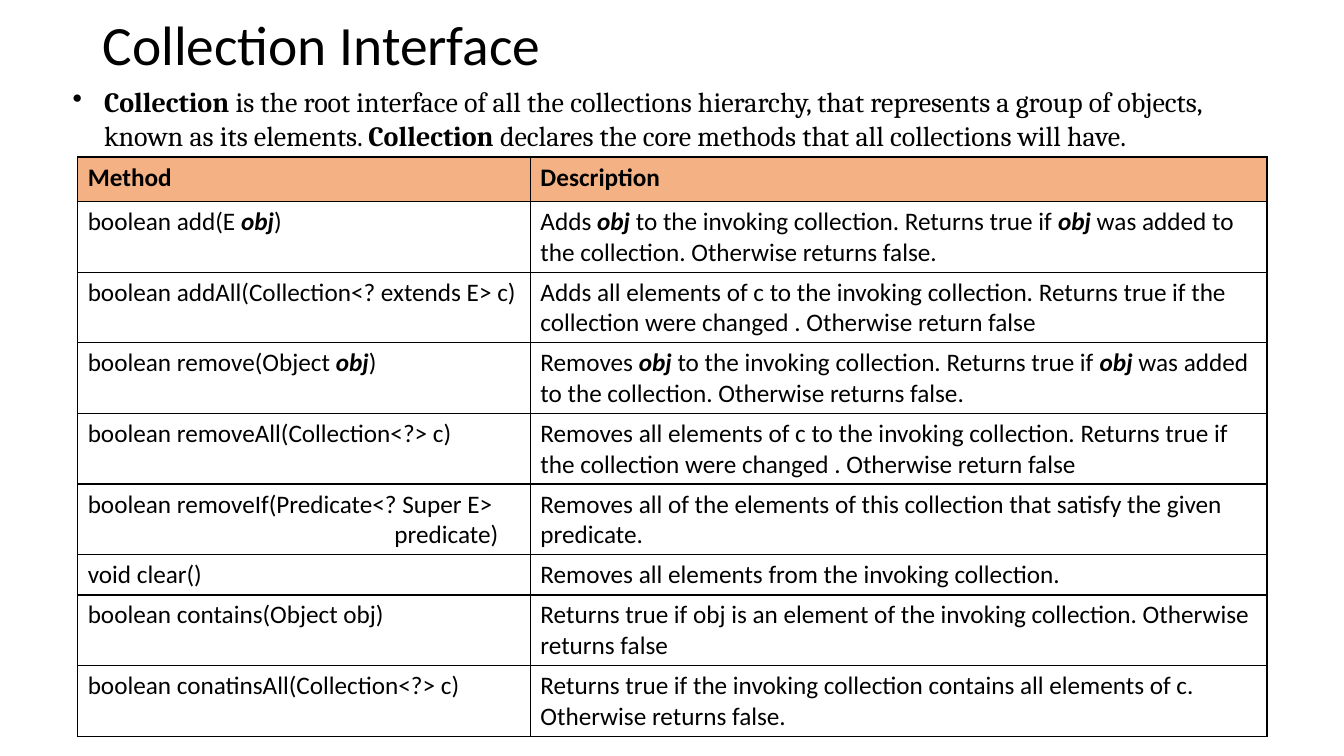
from lxml.etree import SubElement
from pptx import Presentation
from pptx.dml.color import RGBColor
from pptx.enum.text import MSO_ANCHOR
from pptx.oxml.ns import qn
from pptx.util import Inches, Pt

METHODS = [
    ("Method", "Description"),
    ("boolean add(E *obj*)",
     "Adds *obj* to the invoking collection. Returns true if *obj* was added to the collection. "
     "Otherwise returns false."),
    ("boolean addAll(Collection<? extends E> c)",
     "Adds all elements of c to the invoking collection. Returns true if the collection were changed . "
     "Otherwise return false"),
    ("boolean remove(Object *obj*)",
     "Removes *obj* to the invoking collection. Returns true if *obj* was added to the collection. "
     "Otherwise returns false."),
    ("boolean removeAll(Collection<?> c)",
     "Removes all elements of c to the invoking collection. Returns true if the collection were changed . "
     "Otherwise return false"),
    ("boolean removeIf(Predicate<? Super E>\npredicate)",
     "Removes all of the elements of this collection that satisfy the given predicate."),
    ("void clear()", "Removes all elements from the invoking collection."),
    ("boolean contains(Object obj)",
     "Returns true if obj is an element of the invoking collection. Otherwise returns false"),
    ("boolean conatinsAll(Collection<?> c)",
     "Returns true if the invoking collection contains all elements of c. Otherwise returns false."),
]
INTRO = ("*Collection *is the root interface of all the collections hierarchy, that represents a group of "
         "objects, known as its elements. *Collection *declares the core methods that all collections will have.")


def color(hex_code):
    """Turn a hex string into a colour."""
    return RGBColor.from_string(hex_code)


class MethodSlide:
    """Draw styled elements on a 32 by 18 grid."""

    INK, HEADER = "000000", "F4B183"
    BODY, INTRO = "Calibri", "Cambria"

    def __init__(self, deck):
        """Add a blank slide and measure its grid."""
        self.slide = deck.slides.add_slide(deck.slide_layouts[6])
        self.column = deck.slide_width / 32
        self.row = deck.slide_height / 18

    def across(self, columns):
        """Return a length in grid columns."""
        return round(columns * self.column)

    def down(self, rows):
        """Return a length in grid rows."""
        return round(rows * self.row)

    def add_runs(self, paragraph, marked, size, font, bold=False, italic=False):
        """Add runs whose starred parts are emphasised."""
        for position, part in enumerate(marked.split("*")):
            if not part:
                continue
            run = paragraph.add_run()
            run.text = part
            stressed = position % 2 == 1
            run.font.size, run.font.name = Pt(size), font
            run.font.bold = bold or stressed
            run.font.italic = italic and stressed
            run.font.color.rgb = color(self.INK)

    def text(self, left, top, width, height, marked, size, font):
        """Add a wrapping text box and return its frame."""
        frame = self.slide.shapes.add_textbox(
            self.across(left), self.down(top), self.across(width), self.down(height)).text_frame
        frame.word_wrap = True
        self.add_runs(frame.paragraphs[0], marked, size, font)
        return frame

    def title(self, *place, wording):
        """Add the slide title."""
        frame = self.text(*place, wording, 39.6, self.BODY)
        frame.vertical_anchor = MSO_ANCHOR.MIDDLE
        frame.paragraphs[0].line_spacing = 0.9

    def bullet(self, *place, wording):
        """Add a bulleted paragraph."""
        frame = self.text(*place, wording, 20, self.INTRO)
        properties = frame.paragraphs[0]._p.get_or_add_pPr()
        indent = self.across(0.75)
        properties.set("marL", str(indent))
        properties.set("indent", str(-indent))
        SubElement(properties, qn("a:buChar"), char="•")

    def border(self, cell):
        """Outline a table cell."""
        properties = cell._tc.get_or_add_tcPr()
        for side in ("lnL", "lnR", "lnT", "lnB"):
            line = SubElement(properties, qn(f"a:{side}"), w=str(Pt(1)))
            SubElement(SubElement(line, qn("a:solidFill")), qn("a:srgbClr"), val=self.INK)

    def fill_cell(self, cell, wording, header):
        """Fill and style a table cell, indenting continuation lines."""
        self.border(cell)
        if header:
            cell.fill.solid()
            cell.fill.fore_color.rgb = color(self.HEADER)
        else:
            cell.fill.background()
        for position, line in enumerate(wording.split("\n")):
            paragraph = cell.text_frame.add_paragraph() if position else cell.text_frame.paragraphs[0]
            if position:
                paragraph._p.get_or_add_pPr().set("marL", str(self.across(7.3)))
            self.add_runs(paragraph, line, 18, self.BODY, bold=header, italic=True)

    def table(self, left, top, widths, heights, entries):
        """Add a bordered table with a coloured header."""
        grid = self.slide.shapes.add_table(
            len(heights), len(widths), self.across(left), self.down(top),
            self.across(sum(widths)), self.down(sum(heights))).table
        grid.horz_banding = False
        for column, width in zip(grid.columns, widths):
            column.width = self.across(width)
        for number, (row, height, entry) in enumerate(zip(grid.rows, heights, entries)):
            row.height = self.down(height)
            for cell, wording in zip(row.cells, entry):
                self.fill_cell(cell, wording, number == 0)


def main():
    """Build and save the slide."""
    deck = Presentation()
    deck.slide_width, deck.slide_height = Inches(13.33), Inches(7.5)
    page = MethodSlide(deck)
    page.title(2.21, 0.34, 27.6, 1.6, wording="Collection Interface")
    page.bullet(1.49, 1.9, 28.32, 1.85, wording=INTRO)
    page.table(1.85, 3.74, [10.78, 17.54], [1.06] + [1.68] * 5 + [0.96] + [1.68] * 2, METHODS)
    deck.save("out.pptx")


if __name__ == "__main__":
    main()
